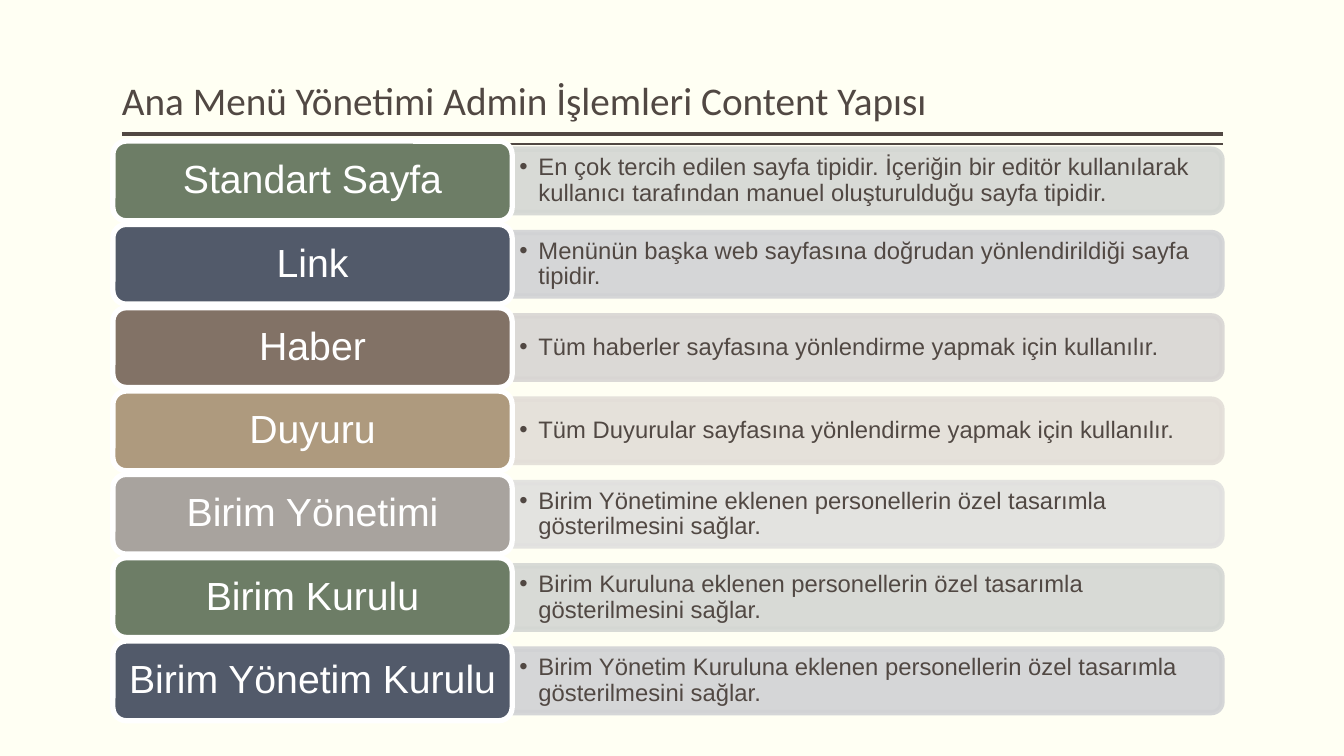
import pptx
import pptx.dml.color
import pptx.enum.shapes
import pptx.enum.text
import pptx.oxml
import pptx.oxml.ns
import pptx.util
from pptx.util import Inches

RGBColor = pptx.dml.color.RGBColor
SHAPES = pptx.enum.shapes.MSO_SHAPE
ANCHOR = pptx.enum.text.MSO_ANCHOR
ALIGN = pptx.enum.text.PP_ALIGN

CREAM = RGBColor(0xFF, 0xFF, 0xF3)
BROWN = RGBColor(0x51, 0x48, 0x43)
WHITE = RGBColor(0xFF, 0xFF, 0xFF)
GREEN = RGBColor(0x6D, 0x7D, 0x66), RGBColor(0xD4, 0xD7, 0xD3)
SLATE = RGBColor(0x52, 0x5A, 0x6A), RGBColor(0xD1, 0xD2, 0xD4)
UMBER = RGBColor(0x82, 0x72, 0x66), RGBColor(0xD8, 0xD5, 0xD3)
SAND = RGBColor(0xAE, 0x9A, 0x7E), RGBColor(0xE3, 0xDE, 0xD8)
GREY = RGBColor(0xA8, 0xA3, 0x9E), RGBColor(0xE1, 0xE0, 0xDF)

PAGE_TYPES = [
    ("Standart Sayfa", "En çok tercih edilen sayfa tipidir. İçeriğin bir editör kullanılarak "
     "kullanıcı tarafından manuel oluşturulduğu sayfa tipidir.", GREEN),
    ("Link", "Menünün başka web sayfasına doğrudan yönlendirildiği sayfa tipidir.", SLATE),
    ("Haber", "Tüm haberler sayfasına yönlendirme yapmak için kullanılır.", UMBER),
    ("Duyuru", "Tüm Duyurular sayfasına yönlendirme yapmak için kullanılır.", SAND),
    ("Birim Yönetimi", "Birim Yönetimine eklenen personellerin özel tasarımla "
     "gösterilmesini sağlar.", GREY),
    ("Birim Kurulu", "Birim Kuruluna eklenen personellerin özel tasarımla "
     "gösterilmesini sağlar.", GREEN),
    ("Birim Yönetim Kurulu", "Birim Yönetim Kuruluna eklenen personellerin özel tasarımla "
     "gösterilmesini sağlar.", SLATE),
]
LABEL_WIDTH, LABEL_HEIGHT = 3.96, 0.79
BAND_HEIGHT = 0.63
BORDER = 3.78


def add_element(parent, tag, attributes=""):
    namespace = pptx.oxml.ns.nsdecls("a")
    parent.append(pptx.oxml.parse_xml(f"<a:{tag} {namespace} {attributes}/>"))


def set_frame(shape, anchor, side, top):
    frame = shape.text_frame
    frame.word_wrap = True
    frame.auto_size = pptx.enum.text.MSO_AUTO_SIZE.NONE
    frame.vertical_anchor = anchor
    frame.margin_left = frame.margin_right = Inches(side)
    frame.margin_top = frame.margin_bottom = Inches(top)
    return frame.paragraphs[0]


def write(paragraph, text, font_name, size, color, alignment=ALIGN.LEFT):
    paragraph.text = text
    paragraph.alignment = alignment
    paragraph.line_spacing = 0.9
    paragraph.font.name = font_name
    paragraph.font.size = pptx.util.Pt(size)
    paragraph.font.color.rgb = color


def paint(shape, fill, line):
    shape.shadow.inherit = False
    shape.fill.solid()
    shape.fill.fore_color.rgb = fill
    shape.line.color.rgb = line
    shape.line.width = pptx.util.Pt(BORDER)


def add_heading(slide, left, top, width, height):
    # Double rule under the title
    for offset, weight in ((0.05, 3), (0.15, 1)):
        y = Inches(top + height + offset)
        rule = slide.shapes.add_connector(
            pptx.enum.shapes.MSO_CONNECTOR.STRAIGHT, Inches(left), y, Inches(left + width), y)
        rule.line.color.rgb = BROWN
        rule.line.width = pptx.util.Pt(weight)
        add_element(rule._element.spPr, "effectLst")

    # Title
    title = slide.shapes.title
    title.left, title.top = Inches(left), Inches(top)
    title.width, title.height = Inches(width), Inches(height)
    paragraph = set_frame(title, ANCHOR.BOTTOM, 0, 0.05)
    write(paragraph, "Ana Menü Yönetimi Admin İşlemleri Content Yapısı", "Calibri", 28, BROWN)


def add_page_type(slide, left, top, width, name, description, colors):
    label_color, band_color = colors
    band_left = left + LABEL_WIDTH
    band_width = width - LABEL_WIDTH
    middle = top + LABEL_HEIGHT / 2

    # Band with its rounded end to the right: a turned upright shape
    band = slide.shapes.add_shape(
        SHAPES.ROUND_2_SAME_RECTANGLE,
        Inches(band_left + (band_width - BAND_HEIGHT) / 2), Inches(middle - band_width / 2),
        Inches(BAND_HEIGHT), Inches(band_width))
    band.rotation = 90
    paint(band, band_color, band_color)
    for color in band._element.spPr.iter(pptx.oxml.ns.qn("a:srgbClr")):
        add_element(color, "alpha", 'val="90000"')

    # Description
    box = slide.shapes.add_textbox(
        Inches(band_left), Inches(middle - 0.285), Inches(band_width - 0.03), Inches(0.57))
    paragraph = set_frame(box, ANCHOR.MIDDLE, 0.07, 0.04)
    properties = paragraph._p.get_or_add_pPr()
    properties.set("marL", str(Inches(0.19)))
    properties.set("indent", str(Inches(-0.19)))
    add_element(properties, "buFont", 'typeface="Arial"')
    add_element(properties, "buChar", 'char="•"')
    write(paragraph, description, "Arial", 17, BROWN)

    # Label
    label = slide.shapes.add_shape(
        SHAPES.ROUNDED_RECTANGLE, Inches(left), Inches(top),
        Inches(LABEL_WIDTH), Inches(LABEL_HEIGHT))
    paint(label, label_color, WHITE)
    paragraph = set_frame(label, ANCHOR.MIDDLE, 0.1, 0.06)
    write(paragraph, name, "Arial", 28, WHITE, ALIGN.CENTER)


def add_page_type_list(slide, left, top, width, height):
    pitch = (height - LABEL_HEIGHT) / (len(PAGE_TYPES) - 1)
    for row, page_type in enumerate(PAGE_TYPES):
        add_page_type(slide, left, top + row * pitch, width, *page_type)


def main():
    presentation = pptx.Presentation()
    presentation.slide_width = Inches(13.33)
    presentation.slide_height = Inches(7.5)
    slide = presentation.slides.add_slide(presentation.slide_layouts.get_by_name("Title Only"))
    slide.background.fill.solid()
    slide.background.fill.fore_color.rgb = CREAM
    add_heading(slide, 1.21, 0.08, 10.92, 1.2)
    add_page_type_list(slide, 1.12, 1.4, 11, 5.75)
    presentation.save("out.pptx")


if __name__ == "__main__":
    main()
